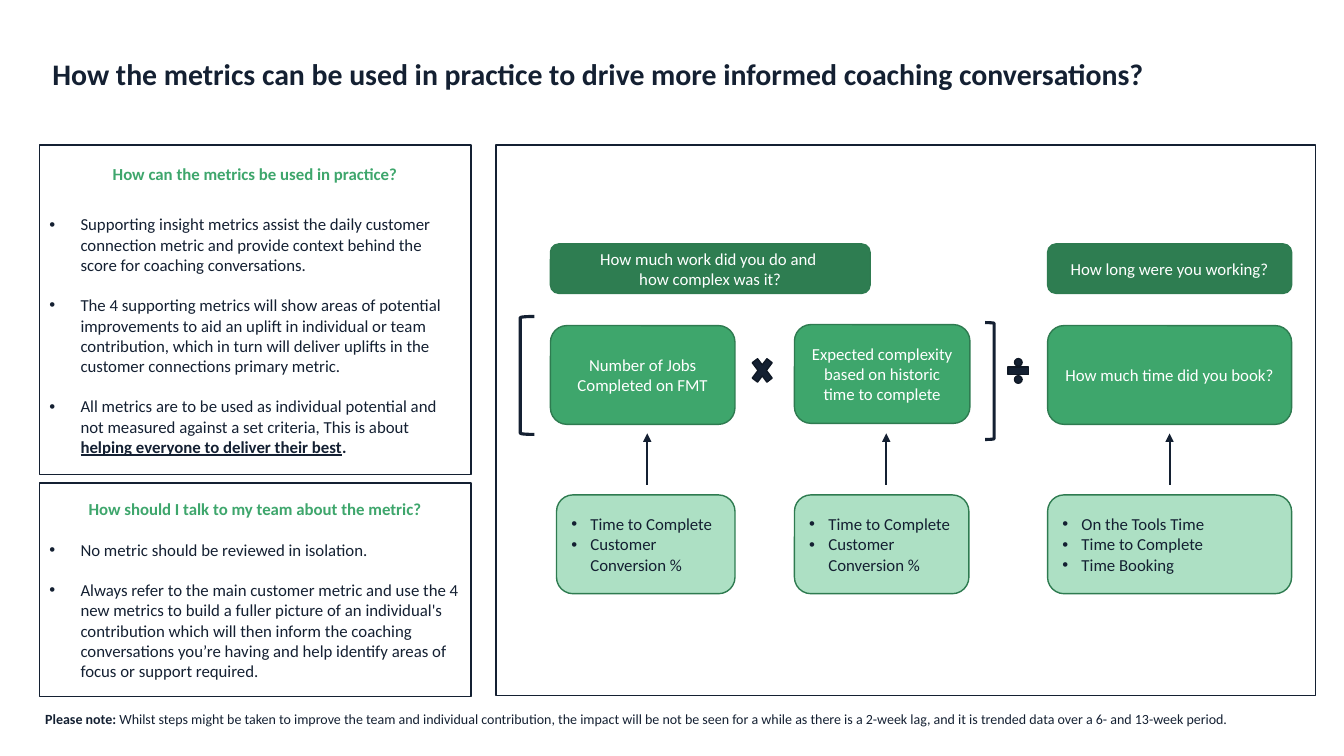
"""Build the slide on using metrics in coaching conversations."""
from dataclasses import dataclass

import pptx
import pptx.dml.color
import pptx.enum.shapes
import pptx.enum.text
import pptx.oxml.ns
import pptx.shapes.autoshape
import pptx.slide
import pptx.text.text
import pptx.util
from lxml import etree

SCALE = 9144
FONT = "Calibri"
HUES = {"ink": "142032", "edge": "0F1825", "rim": "2E7B50", "deep": "2E7D51",
        "green": "3EA66C", "mint": "ADE0C4", "white": "FFFFFF"}
KIND = pptx.enum.shapes.MSO_SHAPE
SIDE = pptx.enum.text.PP_ALIGN
HOLD = pptx.enum.text.MSO_ANCHOR


@dataclass
class Run:
    text: str
    bold: bool = False
    under: bool = False


@dataclass
class Line:
    runs: list[Run]
    hue: str = "ink"
    side: SIDE = SIDE.LEFT
    dent: int = 0
    gap: float = 0
    size: float = 12


@dataclass
class Box:
    left: int
    top: int
    width: int
    height: int
    lines: list[Line]
    kind: KIND = KIND.ROUNDED_RECTANGLE
    fill: str | None = None
    rim: str | None = "rim"
    thick: float = 1
    turn: int = 0
    hold: HOLD = HOLD.MIDDLE


@dataclass
class Stage:
    left: int
    width: int
    top: int
    label: str
    start: int
    span: int
    facts: list[str]
    stem: int


def px(count: int) -> int:
    return pptx.util.Emu(count * SCALE)


def tint(name: str) -> pptx.dml.color.RGBColor:
    return pptx.dml.color.RGBColor.from_string(HUES[name])


def write(para: pptx.text.text._Paragraph, text: str, *, size: float = 12, hue: str = "ink",
          bold: bool = False, under: bool = False) -> None:
    run = para.add_run()
    run.text = text
    font = run.font
    font.name, font.size, font.bold = FONT, pptx.util.Pt(size), bold
    font.underline = under
    font.color.rgb = tint(hue)


def add_dot(para: pptx.text.text._Paragraph, dent: int) -> None:
    props = para._p.get_or_add_pPr()
    props.set("marL", str(px(dent)))
    props.set("indent", str(-px(dent)))
    face = etree.SubElement(props, pptx.oxml.ns.qn("a:buFont"))
    face.set("typeface", "Arial")
    dot = etree.SubElement(props, pptx.oxml.ns.qn("a:buChar"))
    dot.set("char", "•")


def set_lines(frame: pptx.text.text.TextFrame, lines: list[Line]) -> None:
    for spot, line in enumerate(lines):
        para = frame.add_paragraph() if spot else frame.paragraphs[0]
        if line.dent:
            add_dot(para, line.dent)
        para.alignment = line.side
        if line.gap:
            para.space_before = pptx.util.Pt(line.gap)
        for run in line.runs:
            write(para, run.text, size=line.size, hue=line.hue, bold=run.bold, under=run.under)


def draw_box(slide: pptx.slide.Slide, box: Box) -> pptx.shapes.autoshape.Shape:
    shape = slide.shapes.add_shape(box.kind, px(box.left), px(box.top), px(box.width), px(box.height))
    shape.shadow.inherit = False
    shape.rotation = box.turn
    if box.fill:
        shape.fill.solid()
        shape.fill.fore_color.rgb = tint(box.fill)
    else:
        shape.fill.background()
    if box.rim:
        shape.line.color.rgb = tint(box.rim)
        shape.line.width = pptx.util.Pt(box.thick)
    else:
        shape.line.fill.background()
    shape.text_frame.word_wrap = True
    shape.text_frame.vertical_anchor = box.hold
    set_lines(shape.text_frame, box.lines)
    return shape


def draw_arrow(slide: pptx.slide.Slide, stem: int, low: int, high: int) -> None:
    arrow = slide.shapes.add_connector(pptx.enum.shapes.MSO_CONNECTOR.STRAIGHT,
                                       px(stem), px(low), px(stem), px(high))
    arrow.line.color.rgb = tint("ink")
    arrow.line.width = pptx.util.Pt(1.5)
    props = arrow._element.spPr
    tip = etree.SubElement(props.find(pptx.oxml.ns.qn("a:ln")), pptx.oxml.ns.qn("a:tailEnd"))
    tip.set("type", "triangle")
    etree.SubElement(props, pptx.oxml.ns.qn("a:effectLst"))


def mid(text: str) -> Line:
    return Line([Run(text)], "white", SIDE.CENTER)


def head(text: str) -> Line:
    return Line([Run(text, bold=True)], "green", SIDE.CENTER)


def point(*runs: Run, gap: float = 14.6) -> Line:
    return Line(list(runs), dent=31, gap=gap)


def draw_stage(slide: pptx.slide.Slide, stage: Stage) -> None:
    draw_box(slide, Box(stage.left, stage.top, stage.width, 98, [mid(stage.label)], fill="green"))
    facts = [Line([Run(fact)], dent=19) for fact in stage.facts]
    draw_box(slide, Box(stage.start, 491, stage.span, 98, facts, fill="mint"))
    draw_arrow(slide, stage.stem, 481, 430)


def set_title(slide: pptx.slide.Slide, text: str) -> None:
    title = slide.shapes.title
    title.left, title.top, title.width, title.height = px(52), px(59), px(1215), px(42)
    frame = title.text_frame
    frame.margin_left = frame.margin_right = frame.margin_top = frame.margin_bottom = 0
    frame.word_wrap = True
    frame.auto_size = pptx.enum.text.MSO_AUTO_SIZE.NONE
    frame.vertical_anchor = HOLD.TOP
    set_lines(frame, [Line([Run(text, bold=True)], size=21.3)])
    frame.paragraphs[0].line_spacing = 0.9


PAIR = ["Time to Complete", "Customer Conversion %"]
STAGES = [
    Stage(546, 183, 323, "Number of Jobs Completed on FMT", 552, 177, PAIR, 642),
    Stage(788, 174, 322, "Expected complexity based on historic time to complete", 788, 173, PAIR, 879),
    Stage(1039, 242, 323, "How much time did you book?", 1039, 242,
          ["On the Tools Time", "Time to Complete", "Time Booking"], 1160),
]
USE = [
    head("How can the metrics be used in practice?"),
    point(Run("Supporting insight metrics assist the daily customer connection metric and provide "
              "context behind the score for coaching conversations."), gap=22),
    point(Run("The 4 supporting metrics will show areas of potential improvements to aid an uplift in "
              "individual or team contribution, which in turn will deliver uplifts in the customer "
              "connections primary metric.")),
    point(Run("All metrics are to be used as individual potential and not measured against a set "
              "criteria, This is about "),
          Run("helping everyone to deliver their best", True, True), Run(".", True)),
]
TALK = [
    head("How should I talk to my team about the metric?"),
    point(Run("No metric should be reviewed in isolation.")),
    point(Run("Always refer to the main customer metric and use the 4 new metrics to build a fuller "
              "picture of an individual's contribution which will then inform the coaching "
              "conversations you’re having and help identify areas of focus or support required.")),
]
NOTE = Line([Run("Please note: ", True),
             Run("Whilst steps might be taken to improve the team and individual contribution, the "
                 "impact will be not be seen for a while as there is a 2-week lag, and it is trended "
                 "data over a 6- and 13-week period.")], size=10)
BOXES = [
    Box(546, 242, 317, 49, [mid("How much work did you do and "), mid("how complex was it?")], fill="deep"),
    Box(1039, 242, 242, 49, [mid("How long were you working?")], fill="deep"),
    Box(996, 352, 28, 32, [], KIND.MATH_DIVIDE, "ink", "edge"),
    Box(742, 349, 28, 37, [], KIND.MATH_MULTIPLY, "ink", "edge"),
    Box(516, 314, 14, 117, [], KIND.LEFT_BRACKET, rim="ink", thick=2.25),
    Box(977, 320, 9, 116, [], KIND.LEFT_BRACKET, rim="ink", thick=2.25, turn=180),
    Box(35, 700, 1252, 27, [NOTE], KIND.RECTANGLE, "white", None, hold=HOLD.TOP),
    Box(492, 144, 813, 546, [], KIND.RECTANGLE, rim="ink"),
    Box(39, 144, 428, 327, USE, KIND.RECTANGLE, rim="ink"),
    Box(39, 479, 428, 212, TALK, KIND.RECTANGLE, rim="ink"),
]


def main() -> None:
    deck = pptx.Presentation()
    deck.slide_width, deck.slide_height = px(1333), px(750)
    slide = deck.slides.add_slide(deck.slide_layouts[5])
    set_title(slide, "How the metrics can be used in practice to drive more informed coaching conversations?")
    for stage in STAGES:
        draw_stage(slide, stage)
    for box in BOXES:
        draw_box(slide, box)
    deck.save("out.pptx")


if __name__ == "__main__":
    main()
